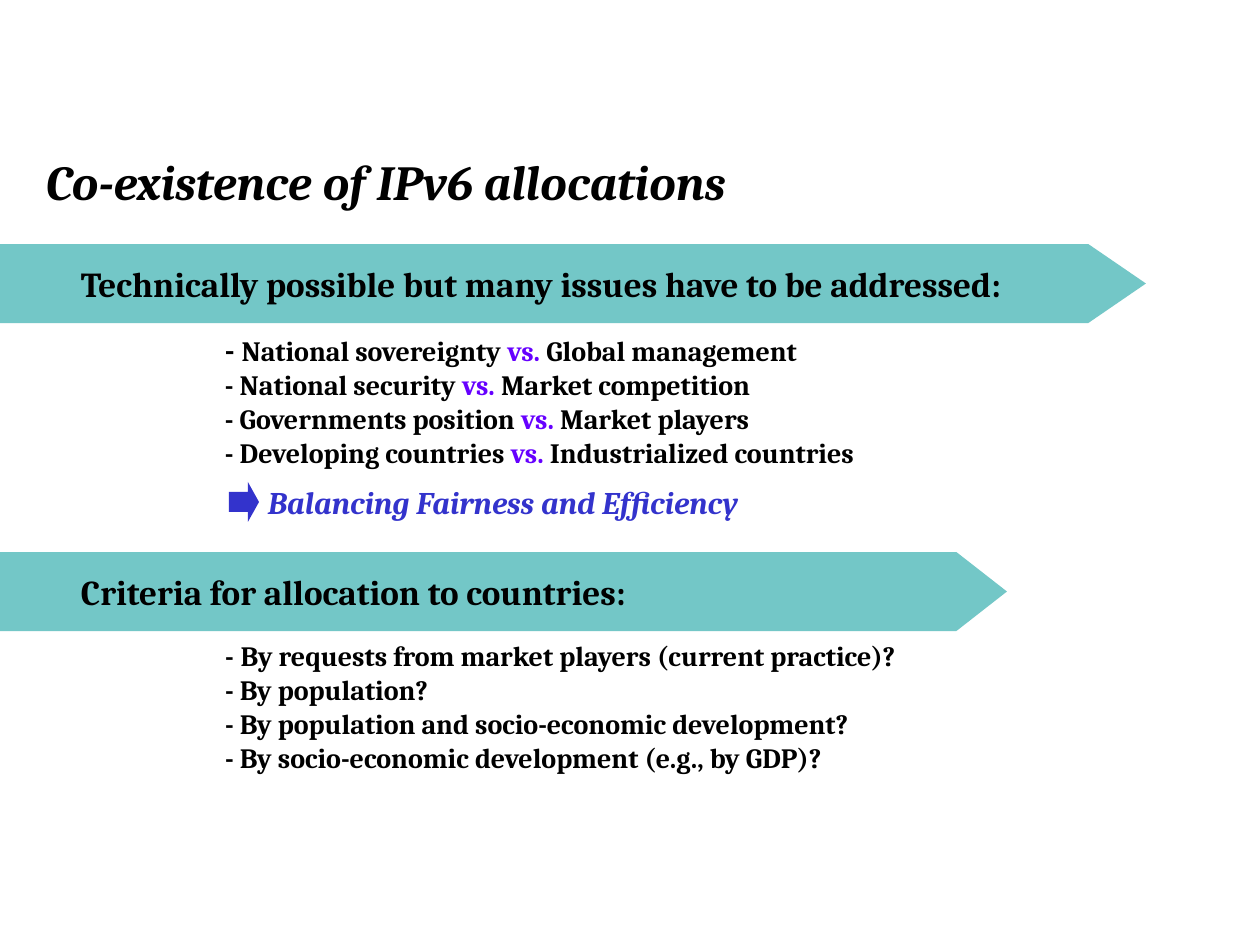
from lxml import etree
from pptx import Presentation
from pptx.dml.color import RGBColor
from pptx.enum.shapes import MSO_SHAPE
from pptx.enum.text import MSO_ANCHOR
from pptx.oxml.ns import qn
from pptx.util import Emu, Pt

PENTAGON = MSO_SHAPE.PENTAGON
RIGHT_ARROW = MSO_SHAPE.RIGHT_ARROW
MIDDLE = MSO_ANCHOR.MIDDLE
TOP = MSO_ANCHOR.TOP

COLORS = {"text": "000000", "banner": "009999", "versus": "6600FF", "accent": "3333CC"}
FONT = "Cambria"
PX = 914400 / 126


def px(*lengths):
    return [Emu(round(length * PX)) for length in lengths]


def write(box, paragraphs, size, italic=False, anchor=TOP, left=12, wrap=True):
    """Fill a box with paragraphs, each a list of (text, format) spans."""
    frame = box.text_frame
    frame.word_wrap = wrap
    frame.vertical_anchor = anchor
    frame.margin_left = px(left)[0]
    for index, spans in enumerate(paragraphs):
        para = frame.paragraphs[0] if index == 0 else frame.add_paragraph()
        for text, style in spans:
            span = para.add_run()
            span.text = text
            span.font.name = FONT
            span.font.size = Pt(style.get("size", size))
            span.font.bold = True
            span.font.italic = style.get("italic", italic)
            span.font.color.rgb = RGBColor.from_string(COLORS[style.get("color", "text")])


deck = Presentation()
deck.slide_width, deck.slide_height = px(1260, 945)
page = deck.slides.add_slide(deck.slide_layouts[6])
shapes = page.shapes

# Title
title = shapes.add_textbox(*px(34, 145, 1152, 72))
write(title, [[("Co-existence of IPv6 allocations", {})]], size=28, italic=True)

# Section banners
banners = [
    (244, 1146, 0.73, "Technically possible but many issues have to be addressed:"),
    (552, 1007, 0.64, "Criteria for allocation to countries:"),
]
for top, width, point, heading in banners:
    banner = shapes.add_shape(PENTAGON, *px(0, top, width, 79))
    banner.adjustments[0] = point
    banner.shadow.inherit = False
    banner.fill.solid()
    banner.fill.fore_color.rgb = RGBColor.from_string(COLORS["banner"])
    color = banner.fill._xPr.find(".//" + qn("a:srgbClr"))
    etree.SubElement(color, qn("a:alpha")).set("val", "55000")
    banner.line.fill.background()
    write(banner, [[(heading, {})]], size=20, anchor=MIDDLE, left=81)
    banner.text_frame.paragraphs[0].alignment = 1

# Opposing issues and the conclusion below them
issues = [
    ("National sovereignty", "Global management"),
    ("National security", "Market competition"),
    ("Governments position", "Market players"),
    ("Developing countries", "Industrialized countries"),
]
lines = [
    [("- ", {"size": 16 if index else 18}), (f"{first} ", {}),
     ("vs.", {"color": "versus"}), (f" {second}", {})]
    for index, (first, second) in enumerate(issues)
]
lines.append([("Balancing Fairness and Efficiency",
               {"size": 18, "italic": True, "color": "accent"})])
issue_box = shapes.add_textbox(*px(213, 324, 754, 203))
write(issue_box, lines, size=16)
conclusion = issue_box.text_frame.paragraphs[-1]
conclusion.space_before = Pt(8)
conclusion._p.get_or_add_pPr().set("marL", str(px(43)[0]))

# Allocation criteria
criteria = [
    "By requests from market players (current practice)?",
    "By population?",
    "By population and socio-economic development?",
    "By socio-economic development (e.g., by GDP)?",
]
lines = [
    [("-", {}), (" ", {"size": 16 if index else 18}), (criterion, {})]
    for index, criterion in enumerate(criteria)
]
criteria_box = shapes.add_textbox(*px(213, 629, 714, 151))
write(criteria_box, lines, size=16, wrap=False)

# Arrow pointing to the conclusion
arrow = shapes.add_shape(RIGHT_ARROW, *px(229, 482, 30, 40))
arrow.adjustments[1] = 0.37
arrow.shadow.inherit = False
arrow.fill.solid()
arrow.fill.fore_color.rgb = RGBColor.from_string(COLORS["accent"])
arrow.line.fill.background()

deck.save("out.pptx")
